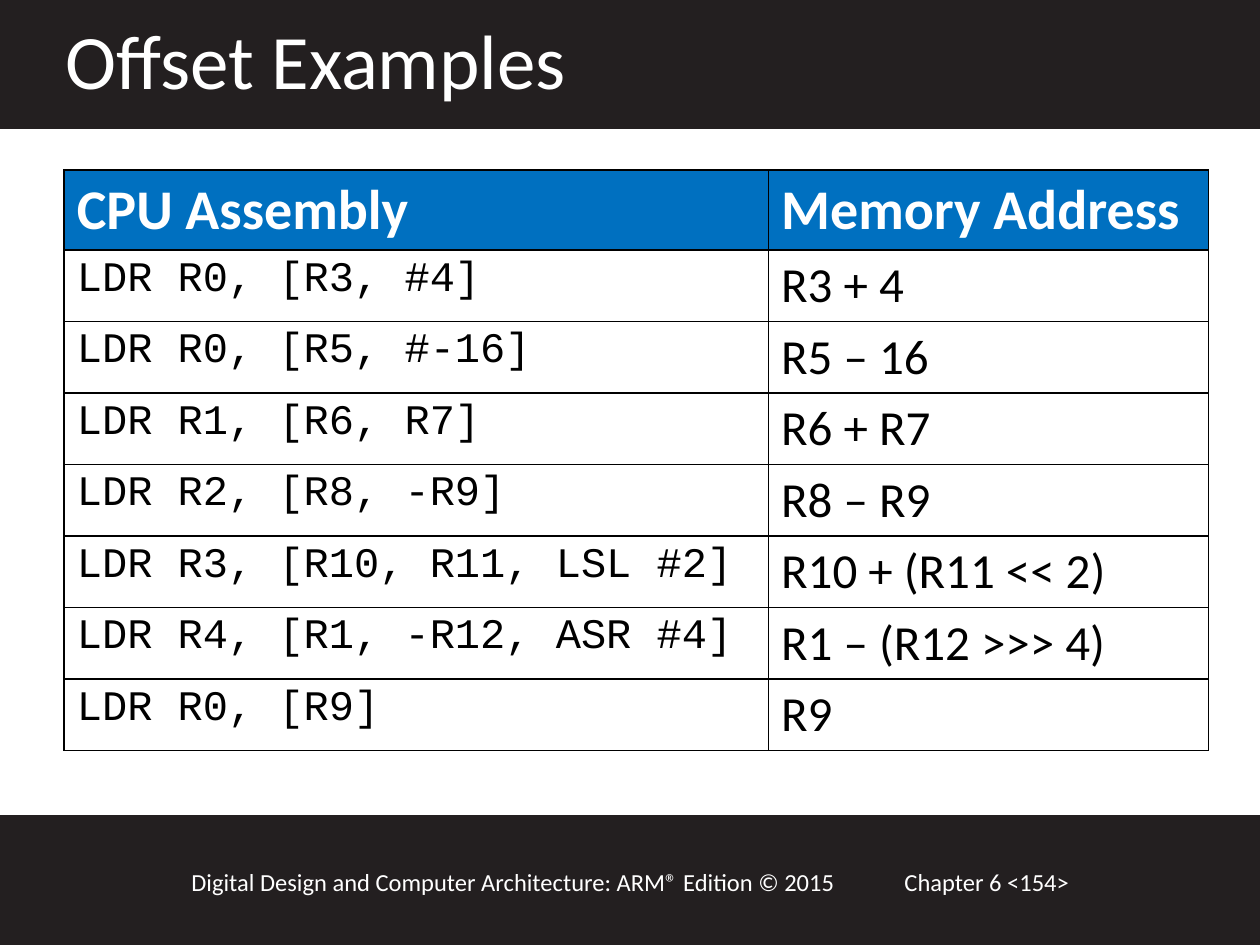
from dataclasses import dataclass

from lxml import etree
from pptx import Presentation
from pptx.dml.color import RGBColor
from pptx.enum.shapes import MSO_SHAPE
from pptx.oxml.ns import qn
from pptx.util import Inches, Pt

RECT = MSO_SHAPE.RECTANGLE


@dataclass(frozen=True)
class Theme:
    dark: str = "231F20"
    header: str = "0070C0"
    light: str = "FFFFFF"
    text: str = "000000"
    sans: str = "Calibri"
    mono: str = "Courier New"
    title: int = 44
    heading: int = 32
    body: int = 28
    code: int = 24
    footer: int = 14


class SlideBuilder:
    def __init__(self, s, theme):
        self.s = s
        self.theme = theme

    def style(self, p, size, color, font=None, bold=False):
        p.font.size = Pt(size)
        p.font.name = font or self.theme.sans
        p.font.bold = bold
        p.font.color.rgb = RGBColor.from_string(color)

    def band(self, top, height):
        sp = self.s.shapes.add_shape(RECT, 0, Inches(top), Inches(10), Inches(height))
        color = RGBColor.from_string(self.theme.dark)
        sp.shadow.inherit = False
        sp.fill.solid()
        sp.fill.fore_color.rgb = color
        sp.line.color.rgb = color
        sp.line.width = Pt(2)

    def text(self, text, left, top, width, height, size):
        box = self.s.shapes.add_textbox(
            Inches(left), Inches(top), Inches(width), Inches(height))
        tf = box.text_frame
        tf.word_wrap = True
        p = tf.paragraphs[0]
        p.text = text
        self.style(p, size, self.theme.light)

    def border(self, cell):
        tcPr = cell._tc.get_or_add_tcPr()
        for side in ("a:lnL", "a:lnR", "a:lnT", "a:lnB"):
            ln = etree.SubElement(tcPr, qn(side), w=str(Pt(1)))
            fill = etree.SubElement(ln, qn("a:solidFill"))
            etree.SubElement(fill, qn("a:srgbClr"), val=self.theme.text)

    def table(self, rows, left, top, widths, row_height):
        t = self.theme
        table = self.s.shapes.add_table(
            len(rows), len(widths), Inches(left), Inches(top),
            Inches(sum(widths)), Inches(row_height * len(rows))).table
        for column, width in zip(table.columns, widths):
            column.width = Inches(width)
        body_styles = ((t.code, t.text, t.mono), (t.body, t.text, t.sans))
        for i, row in enumerate(rows):
            table.rows[i].height = Inches(row_height)
            for j, text in enumerate(row):
                cell = table.cell(i, j)
                self.border(cell)
                p = cell.text_frame.paragraphs[0]
                p.text = text
                if i == 0:
                    cell.fill.solid()
                    cell.fill.fore_color.rgb = RGBColor.from_string(t.header)
                    self.style(p, t.heading, t.light, bold=True)
                else:
                    cell.fill.background()
                    self.style(p, *body_styles[j])


OFFSETS = [
    ("CPU Assembly", "Memory Address"),
    ("LDR R0, [R3, #4]", "R3 + 4"),
    ("LDR R0, [R5, #-16]", "R5 – 16"),
    ("LDR R1, [R6, R7]", "R6 + R7"),
    ("LDR R2, [R8, -R9]", "R8 – R9"),
    ("LDR R3, [R10, R11, LSL #2]", "R10 + (R11 << 2)"),
    ("LDR R4, [R1, -R12, ASR #4]", "R1 – (R12 >>> 4)"),
    ("LDR R0, [R9]", "R9"),
]


def main():
    prs = Presentation()
    prs.slide_width = Inches(10)
    prs.slide_height = Inches(7.5)
    theme = Theme()
    b = SlideBuilder(prs.slides.add_slide(prs.slide_layouts[6]), theme)
    b.band(6.48, 1.02)
    b.band(0, 1.01)
    b.text("Chapter 6 <154>", 7.08, 6.83, 2.17, 0.34, theme.footer)
    b.text("Digital Design and Computer Architecture: ARM® Edition © 2015",
           1.42, 6.83, 5.75, 0.34, theme.footer)
    b.table(OFFSETS, 0.51, 1.35, (5.59, 3.49), 0.41)
    b.text("Offset Examples", 0.42, 0.05, 9.49, 0.84, theme.title)
    prs.save("out.pptx")


if __name__ == "__main__":
    main()
